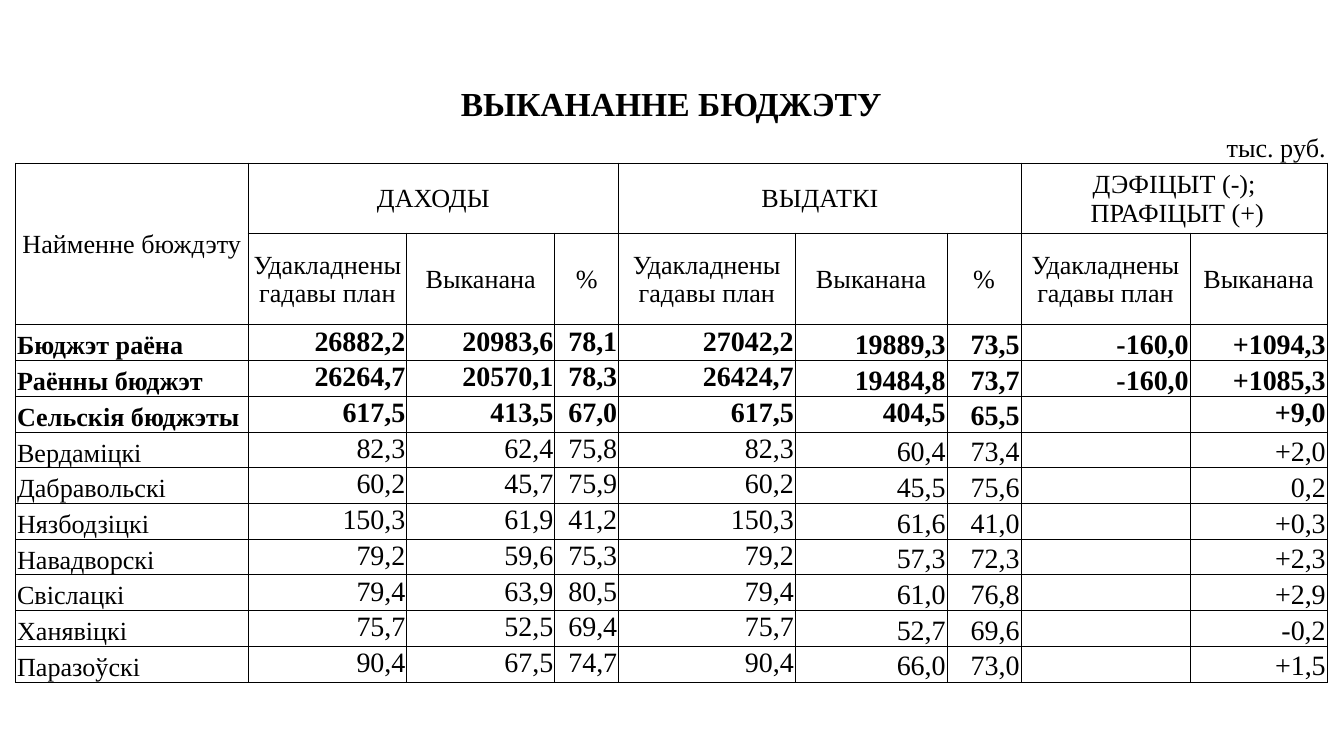
from lxml.etree import SubElement
from pptx import Presentation
from pptx.dml.color import RGBColor
from pptx.enum.text import MSO_ANCHOR, PP_ALIGN
from pptx.oxml.ns import qn
from pptx.util import Pt

COLORS = {"text": "000000", "border": "000000"}
FONT = "Times New Roman"
NO_STYLE = "{2D5ABB26-0587-4C30-8999-92F81FD0307C}"
COL_WIDTHS = [124.5, 72.7, 12.4, 52.8, 26.5, 34.2, 94.6, 65, 16.4, 39.6, 90.6, 8.6, 64.8]
ROW_HEIGHTS = [24.4, 19.1, 37.5, 49.2] + [19.15] * 10
FIELDS = [(0, 1), (1, 2), (3, 2), (5, 1), (6, 1), (7, 2), (9, 1), (10, 1), (11, 2)]
GROUPS = [
    (1, 5, "ДАХОДЫ"),
    (6, 4, "ВЫДАТКІ"),
    (10, 3, "ДЭФІЦЫТ (-);\n ПРАФІЦЫТ (+)"),
]
PLAN, DONE = "Удакладнены гадавы план", "Выканана"
HEADINGS = [PLAN, DONE, "%", PLAN, DONE, "%", PLAN, DONE]
HEAD_ROW, BODY_ROW, BOLD_ROWS = 2, 4, 3
TOP_COLS = {1, 3, 5, 6}
TOP_CELLS = {("Сельскія бюджэты", 7), ("Сельскія бюджэты", 11)}
BUDGETS = [
    ("Бюджэт раёна", "26882,2", "20983,6", "78,1", "27042,2", "19889,3", "73,5", "-160,0", "+1094,3"),
    ("Раённы бюджэт", "26264,7", "20570,1", "78,3", "26424,7", "19484,8", "73,7", "-160,0", "+1085,3"),
    ("Сельскія бюджэты", "617,5", "413,5", "67,0", "617,5", "404,5", "65,5", "", "+9,0"),
    ("Вердаміцкі", "82,3", "62,4", "75,8", "82,3", "60,4", "73,4", "", "+2,0"),
    ("Дабравольскі", "60,2", "45,7", "75,9", "60,2", "45,5", "75,6", "", "0,2"),
    ("Нязбодзіцкі", "150,3", "61,9", "41,2", "150,3", "61,6", "41,0", "", "+0,3"),
    ("Навадворскі", "79,2", "59,6", "75,3", "79,2", "57,3", "72,3", "", "+2,3"),
    ("Свіслацкі", "79,4", "63,9", "80,5", "79,4", "61,0", "76,8", "", "+2,9"),
    ("Ханявіцкі", "75,7", "52,5", "69,4", "75,7", "52,7", "69,6", "", "-0,2"),
    ("Паразоўскі", "90,4", "67,5", "74,7", "90,4", "66,0", "73,0", "", "+1,5"),
]


def draw_borders(cell, sides):
    tc_pr = cell._tc.get_or_add_tcPr()
    for side in sides:
        ln = SubElement(tc_pr, qn(f"a:ln{side}"), w=str(Pt(0.5)))
        fill = SubElement(ln, qn("a:solidFill"))
        SubElement(fill, qn("a:srgbClr"), val=COLORS["border"])


def format_cell(cell, sides):
    draw_borders(cell, sides)
    cell.fill.background()
    cell.margin_left = cell.margin_right = cell.margin_top = Pt(0.75)
    cell.margin_bottom = 0
    cell.text_frame.paragraphs[0]._p.get_or_add_endParaRPr().set("sz", "1200")


def merge_across(table, row, col, span, rows=1):
    cell = table.cell(row, col)
    if span > 1 or rows > 1:
        cell.merge(table.cell(row + rows - 1, col + span - 1))
    return cell


def write(cell, text, size=14, bold=False, align=PP_ALIGN.CENTER, anchor=MSO_ANCHOR.MIDDLE):
    cell.vertical_anchor = anchor
    if not text:
        return
    tf = cell.text_frame
    tf.text = text
    for p in tf.paragraphs:
        p.alignment = align
        p.font.name = FONT
        p.font.size = Pt(size)
        p.font.bold = bold
        p.font.color.rgb = RGBColor.from_string(COLORS["text"])


def fill_caption(table):
    write(merge_across(table, 0, 0, len(COL_WIDTHS)), "ВЫКАНАННЕ БЮДЖЭТУ", 18, True)
    for col in (2, 4, 8, 10):
        merge_across(table, 1, col, 2)
    write(table.cell(1, 12), "тыс. руб.", align=PP_ALIGN.RIGHT, anchor=MSO_ANCHOR.BOTTOM)


def fill_header(table):
    write(merge_across(table, HEAD_ROW, 0, 1, 2), "Найменне бюждэту")
    for col, span, text in GROUPS:
        write(merge_across(table, HEAD_ROW, col, span), text)
    for (col, span), text in zip(FIELDS[1:], HEADINGS):
        write(merge_across(table, HEAD_ROW + 1, col, span), text)


def fill_body(table):
    for i, budget in enumerate(BUDGETS):
        for (col, span), text in zip(FIELDS, budget):
            is_top = col in TOP_COLS or (budget[0], col) in TOP_CELLS
            write(
                merge_across(table, BODY_ROW + i, col, span),
                text,
                size=15 if col else 14,
                bold=i < BOLD_ROWS,
                align=PP_ALIGN.RIGHT if col else PP_ALIGN.LEFT,
                anchor=MSO_ANCHOR.TOP if is_top else MSO_ANCHOR.BOTTOM,
            )


def add_budget_table(s, left, top, width, height):
    frame = s.shapes.add_table(
        len(ROW_HEIGHTS), len(COL_WIDTHS), Pt(left), Pt(top), Pt(width), Pt(height)
    )
    table = frame.table
    table._tbl.tblPr.find(qn("a:tableStyleId")).text = NO_STYLE
    table.first_row = table.horz_banding = False
    for column, share in zip(table.columns, COL_WIDTHS):
        column.width = Pt(width * share / sum(COL_WIDTHS))
    for row, share in zip(table.rows, ROW_HEIGHTS):
        row.height = Pt(height * share / sum(ROW_HEIGHTS))
    for i, row in enumerate(table.rows):
        sides = "LRTB" if i >= HEAD_ROW else "B" * i
        for cell in row.cells:
            format_cell(cell, sides)
    fill_caption(table)
    fill_header(table)
    fill_body(table)


def main():
    prs = Presentation()
    prs.slide_width, prs.slide_height = Pt(720), Pt(405)
    s = prs.slides.add_slide(prs.slide_layouts[6])
    add_budget_table(s, 8.4, 43.9, 702.7, 321.7)
    prs.save("out.pptx")


if __name__ == "__main__":
    main()
